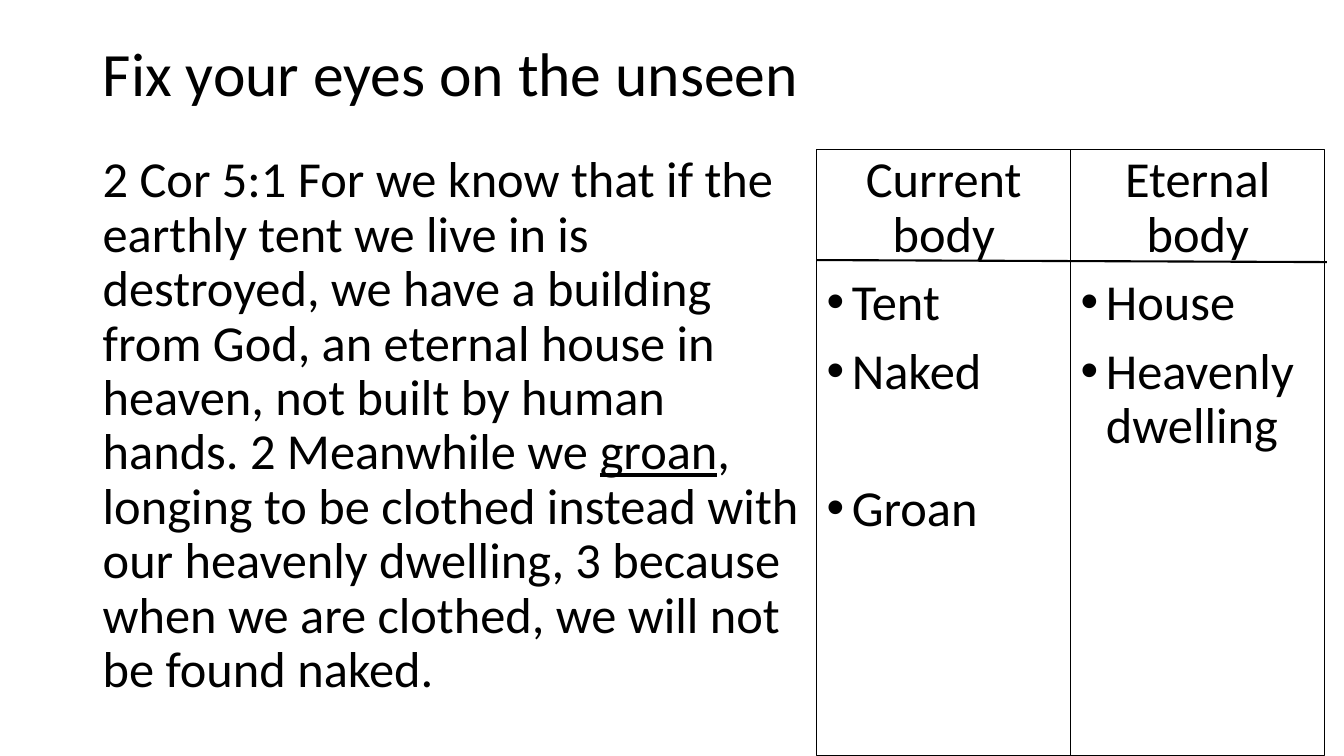
from lxml import etree
from pptx import Presentation
from pptx.dml.color import RGBColor
from pptx.enum.shapes import MSO_CONNECTOR, MSO_SHAPE
from pptx.enum.text import MSO_ANCHOR, MSO_AUTO_SIZE, PP_ALIGN
from pptx.oxml.ns import qn
from pptx.util import Inches, Pt

LEFT, CENTER = PP_ALIGN.LEFT, PP_ALIGN.CENTER
TOP, MIDDLE = MSO_ANCHOR.TOP, MSO_ANCHOR.MIDDLE
NO_AUTOFIT = MSO_AUTO_SIZE.NONE
RECTANGLE = MSO_SHAPE.RECTANGLE
STRAIGHT = MSO_CONNECTOR.STRAIGHT

TITLE = "Fix your eyes on the unseen"
# (text, underlined)
VERSE = [
    ("2 Cor 5:1 For we know that if the earthly tent we live in is destroyed, "
     "we have a building from God, an eternal house in heaven, not built by "
     "human hands. 2 Meanwhile we ", False),
    ("groan", True),
    (", longing to be clothed instead with our heavenly dwelling, 3 because "
     "when we are clothed, we will not be found naked.", False),
]
# (heading, [(bullet, space before in points)])
COLUMNS = [
    ("Current body", [("Tent", 10), ("Naked", 10), ("Groan", 59)]),
    ("Eternal body", [("House", 10), ("Heavenly dwelling", 10)]),
]

COLORS = {"ink": "000000"}
FONT = "Calibri"
TITLE_SIZE, BODY_SIZE = 44, 36
MARGIN, BODY_TOP, BODY_H = 0.92, 1.48, 6.02
COLUMN_LEFT, COLUMN_W = 8.1, 2.52
INDENT = 0.25

INK = RGBColor.from_string(COLORS["ink"])


def format_paragraph(p, size, align=LEFT, before=10):
    p.alignment = align
    p.line_spacing = 0.9
    p.space_before = Pt(before)
    for r in p.runs:
        r.font.name = FONT
        r.font.size = Pt(size)
        r.font.color.rgb = INK


def set_frame(tf, anchor):
    tf.word_wrap = True
    tf.auto_size = NO_AUTOFIT
    tf.vertical_anchor = anchor


def add_bullet(p):
    pPr = p._p.get_or_add_pPr()
    pPr.set("marL", str(Inches(INDENT)))
    pPr.set("indent", str(-Inches(INDENT)))
    etree.SubElement(pPr, qn("a:buFont")).set("typeface", "Arial")
    etree.SubElement(pPr, qn("a:buChar")).set("char", "•")


def add_column(slide, left, heading, items):
    sp = slide.shapes.add_shape(RECTANGLE, Inches(left), Inches(BODY_TOP),
                                Inches(COLUMN_W), Inches(BODY_H))
    sp.shadow.inherit = False
    sp.fill.background()
    sp.line.color.rgb = INK
    sp.line.width = Pt(0.75)
    tf = sp.text_frame
    set_frame(tf, TOP)
    p = tf.paragraphs[0]
    p.text = heading
    format_paragraph(p, BODY_SIZE, CENTER)
    for text, before in items:
        p = tf.add_paragraph()
        p.text = text
        format_paragraph(p, BODY_SIZE, before=before)
        add_bullet(p)


def main():
    prs = Presentation()
    prs.slide_width, prs.slide_height = Inches(13.33), Inches(7.5)
    slide = prs.slides.add_slide(prs.slide_layouts[5])

    title = slide.shapes.title
    title.left, title.top = Inches(MARGIN), Inches(0.03)
    title.width, title.height = Inches(11.5), Inches(1.45)
    title.text_frame.text = TITLE
    set_frame(title.text_frame, MIDDLE)
    format_paragraph(title.text_frame.paragraphs[0], TITLE_SIZE, before=0)

    verse = slide.shapes.add_textbox(
        Inches(MARGIN), Inches(BODY_TOP),
        Inches(COLUMN_LEFT - MARGIN), Inches(BODY_H))
    set_frame(verse.text_frame, TOP)
    p = verse.text_frame.paragraphs[0]
    for text, underlined in VERSE:
        r = p.add_run()
        r.text = text
        r.font.underline = underlined
    format_paragraph(p, BODY_SIZE)

    for i, (heading, items) in enumerate(COLUMNS):
        add_column(slide, COLUMN_LEFT + i * COLUMN_W, heading, items)

    rule = slide.shapes.add_connector(STRAIGHT, Inches(COLUMN_LEFT), Inches(2.58),
                                      Inches(13.16), Inches(2.6))
    rule.line.color.rgb = INK
    rule.line.width = Pt(1.5)
    etree.SubElement(rule._element.spPr, qn("a:effectLst"))

    prs.save("out.pptx")


if __name__ == "__main__":
    main()
